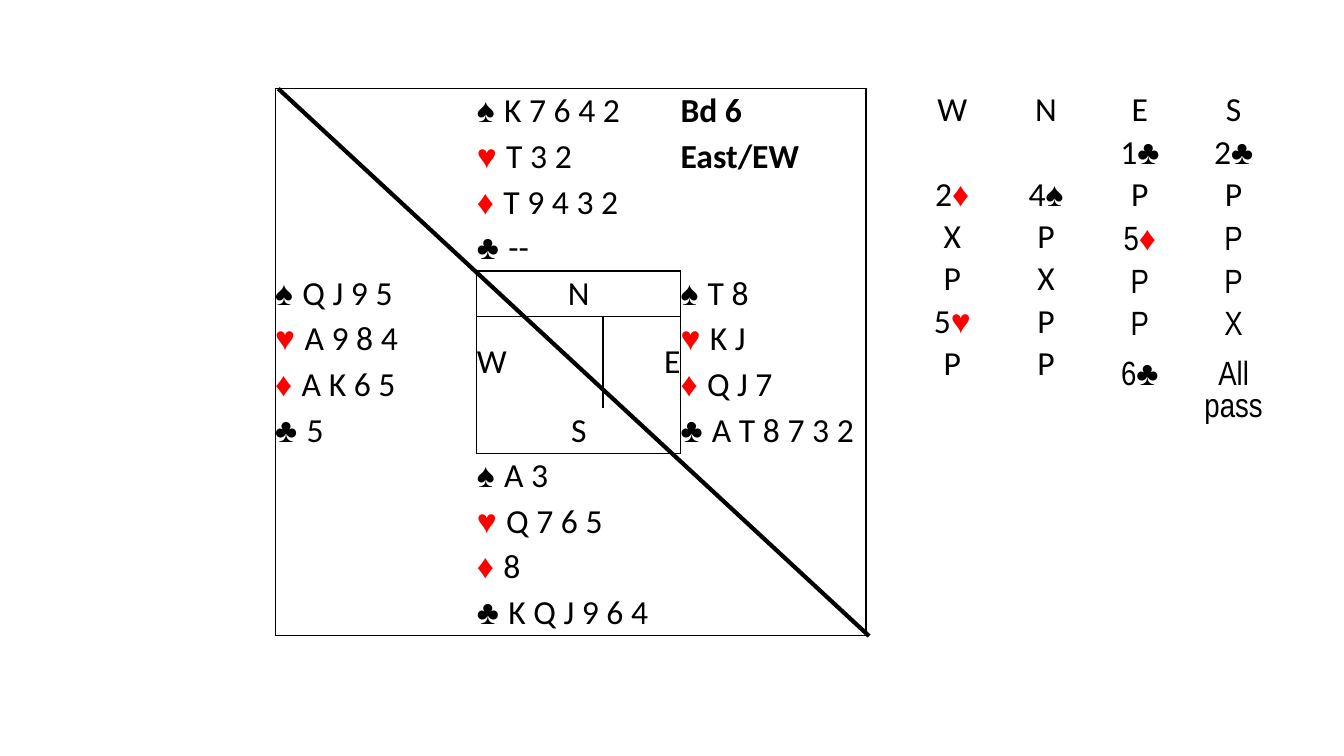
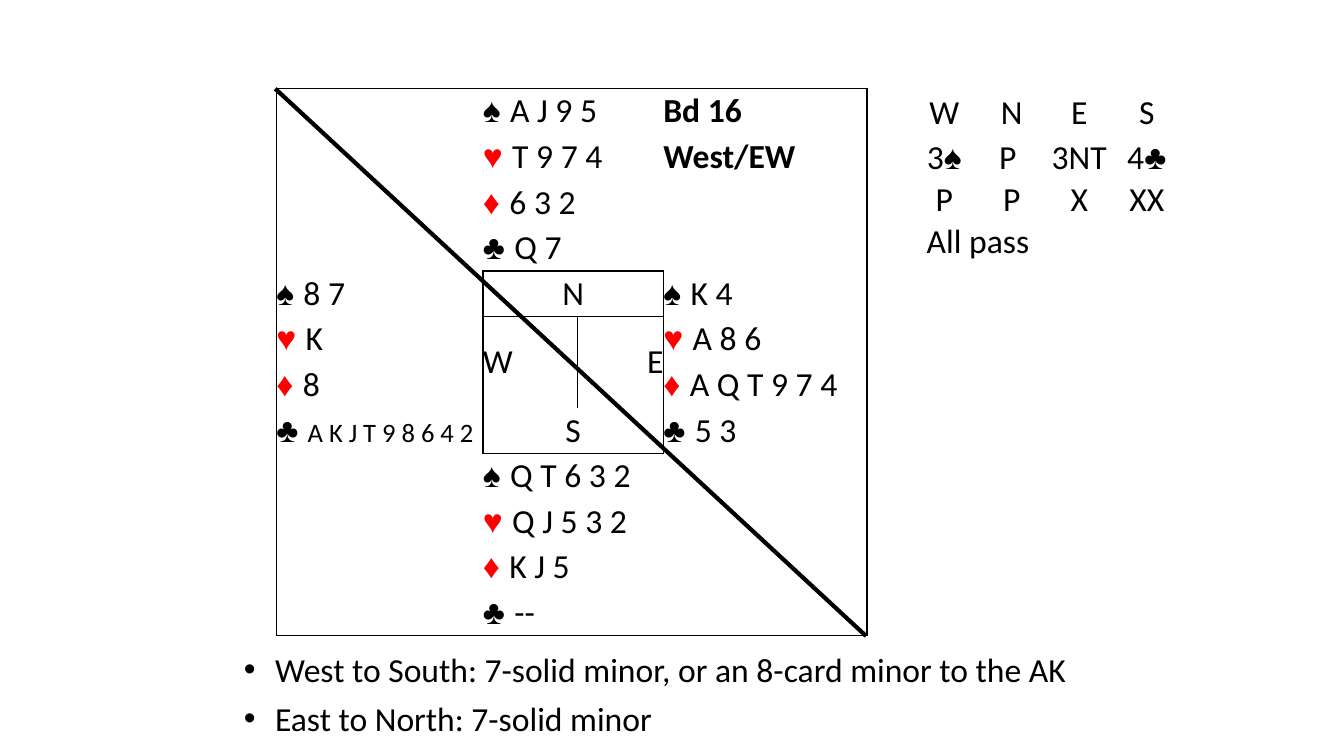
"""Build two bridge deal slides, each with a hand diagram and its auction."""
from pptx import Presentation
from pptx.dml.color import RGBColor
from pptx.enum.shapes import MSO_CONNECTOR
from pptx.enum.text import MSO_ANCHOR, PP_ALIGN
from pptx.oxml import parse_xml
from pptx.oxml.ns import nsdecls
from pptx.util import Inches, Pt

BLACK = RGBColor(0, 0, 0)
RED = RGBColor(255, 0, 0)
LEFT, MID, RIGHT = PP_ALIGN.LEFT, PP_ALIGN.CENTER, PP_ALIGN.RIGHT
TOP, CENTER, BASE = MSO_ANCHOR.TOP, MSO_ANCHOR.MIDDLE, MSO_ANCHOR.BOTTOM
STRAIGHT = MSO_CONNECTOR.STRAIGHT
BODY, NARROW, SYMBOL = "Calibri", "Arial Narrow", "Arial"
SUITS, REDS = "♠♥♦♣", "♥♦"
SIZE, SMALL, FULL = 24, 19, 12
WIDE, HIGH = 13.33, 7.5
DECK_TOP, DEAL_HIGH, DEAL_ROWS = 0.88, 5.43, 12
BID_ROW = 0.42
SEATS = {"N": (0, 1), "W": (4, 0), "E": (4, 3), "S": (8, 1)}
COMPASS = {"N": (4, 1, MID), "W": (5, 1, LEFT),
           "E": (5, 2, RIGHT), "S": (7, 1, MID)}
NO_STYLE = "{2D5ABB26-0587-4C30-8999-92F81FD0307C}"

DEALS = [
    {
        "left": 2.73, "cols": [2, 1.25, 0.77, 1.84], "shift": 0.03,
        "head": ["Bd 6", "East/EW"],
        "hands": {
            "N": ["K 7 6 4 2", "T 3 2", "T 9 4 3 2", "--"],
            "W": ["Q J 9 5", "A 9 8 4", "A K 6 5", "5"],
            "E": ["T 8", "K J", "Q J 7", "A T 8 7 3 2"],
            "S": ["A 3", "Q 7 6 5", "8", "K Q J 9 6 4"],
        },
    },
    {
        "left": 2.74, "cols": [2.05, 0.94, 0.85, 2.02], "shift": -0.01,
        "head": ["Bd 16", "West/EW"],
        "hands": {
            "N": ["A J 9 5", "T 9 7 4", "6 3 2", "Q 7"],
            "W": ["8 7", "K", "8", "A K J T 9 8 6 4 2"],
            "E": ["K 4", "A 8 6", "A Q T 9 7 4", "5 3"],
            "S": ["Q T 6 3 2", "Q J 5 3 2", "K J 5", "--"],
        },
    },
]
CALLS = [
    [
        ["W", "N", "E", "S"],
        ["", "", "1♣", "2♣"],
        ["2♦", "4♠", "P", "P"],
        ["X", "P", "5♦", "P"],
        ["P", "X", "P", "P"],
        ["5♥", "P", "P", "X"],
        ["P", "P", "6♣", "All pass"],
    ],
    [
        ["W", "N", "E", "S"],
        ["3♠", "P ", "3NT", "4♣"],
        ["P", "P", "X", "XX"],
        ["All pass", "", "", ""],
    ],
]
NOTES = ["West to South: 7-solid minor, or an 8-card minor to the AK",
         "East to North: 7-solid minor"]


def put(par, text, size=SIZE, name=BODY, bold=False):
    """Add a run, with suit symbols in their own font and colour."""
    run = par.add_run()
    run.text = text
    suit = text[0] in SUITS
    form = {"size": Pt(size), "name": SYMBOL if suit else name, "bold": bold}
    for key, value in form.items():
        setattr(run.font, key, value)
    run.font.color.rgb = RED if text[0] in REDS else BLACK


def grid(slide, left, cols, rows, pad):
    """Add a plain table with the given column widths and row heights."""
    frame = slide.shapes.add_table(
        len(rows), len(cols), Inches(left), Inches(DECK_TOP),
        Inches(sum(cols)), Inches(sum(rows)))
    table = frame.table
    table._tbl.tblPr[0].text = NO_STYLE
    table.first_row = table.horz_banding = False
    for col, wide in zip(table.columns, cols):
        col.width = Inches(wide)
    for row, high in zip(table.rows, rows):
        row.height = Inches(high)
    form = {"margin_left": pad, "margin_right": pad, "margin_top": pad,
            "margin_bottom": 0, "vertical_anchor": CENTER}
    for cell in table.iter_cells():
        cell.fill.background()
        for key, value in form.items():
            setattr(cell, key, value)
    return table


def box(table, top, left, base, right):
    """Draw a border around a block of cells."""
    for row in range(top, base + 1):
        for col in range(left, right + 1):
            cell = table.cell(row, col)
            if cell.is_spanned:
                continue
            sides = {"L": col == left,
                     "R": col + cell.span_width - 1 == right,
                     "T": row == top,
                     "B": row + cell.span_height - 1 == base}
            edges = [side for side, shown in sides.items() if shown]
            for place, side in enumerate(edges):
                cell._tc.get_or_add_tcPr().insert(place, parse_xml(
                    f'<a:ln{side} {nsdecls("a")} w="{Pt(1)}"><a:solidFill>'
                    f'<a:srgbClr val="{BLACK}"/></a:solidFill></a:ln{side}>'))


def slash(slide, left, wide):
    """Draw the thick diagonal across the hand diagram."""
    line = slide.shapes.add_connector(
        STRAIGHT, Inches(left), Inches(DECK_TOP),
        Inches(left + wide), Inches(DECK_TOP + DEAL_HIGH))
    line.line.color.rgb = BLACK
    line.line.width = Pt(3)
    line._element.spPr.append(parse_xml(f'<a:effectLst {nsdecls("a")}/>'))


def deal(slide, left, cols, shift, head, hands):
    """Lay out four hands around the compass."""
    table = grid(slide, left, cols, [DEAL_HIGH / DEAL_ROWS] * DEAL_ROWS, 0)
    for row in range(DEAL_ROWS):
        if row not in (5, 6):
            table.cell(row, 1).merge(table.cell(row, 2))
    for col in (1, 2):
        table.cell(5, col).merge(table.cell(6, col))
    for seat, (row, col) in SEATS.items():
        for step, (suit, cards) in enumerate(zip(SUITS, hands[seat])):
            par = table.cell(row + step, col).text_frame.paragraphs[0]
            put(par, suit + " ")
            put(par, cards, SMALL if len(cards) > FULL else SIZE)
    for seat, (row, col, align) in COMPASS.items():
        par = table.cell(row, col).text_frame.paragraphs[0]
        par.alignment = align
        put(par, seat)
    for row, text in enumerate(head):
        put(table.cell(row, 3).text_frame.paragraphs[0], text, bold=True)
    box(table, 0, 0, DEAL_ROWS - 1, 3)
    box(table, 4, 1, 7, 2)
    slash(slide, left + shift, sum(cols))


def bids(slide, left, wide, rows, calls):
    """Lay out the auction, one column for each seat."""
    table = grid(slide, left, [wide] * 4, rows, Inches(0.01))
    for row, line in enumerate(calls):
        for col, call in enumerate(line):
            if not call:
                continue
            cell = table.cell(row, col)
            thin = row > 2 and col > 1
            cell.vertical_anchor = BASE if thin else CENTER
            par = cell.text_frame.paragraphs[0]
            par.alignment = MID
            bare = call.rstrip(SUITS)
            for part in filter(None, (bare, call[len(bare):])):
                put(par, part, name=NARROW if thin else BODY)
    return table


def notes(slide, left, top, wide, high, lines):
    """Add a bulleted list."""
    frame = slide.shapes.add_textbox(
        *map(Inches, (left, top, wide, high))).text_frame
    frame.word_wrap = True
    for step, text in enumerate(lines):
        par = frame.add_paragraph() if step else frame.paragraphs[0]
        par.space_after = Pt(6)
        put(par, text)
        prop = par._p.get_or_add_pPr()
        prop.set("marL", str(Inches(0.31)))
        prop.set("indent", str(-Inches(0.31)))
        for tag in (f'buFont {nsdecls("a")} typeface="{SYMBOL}"',
                    f'buChar {nsdecls("a")} char="•"'):
            prop.append(parse_xml(f"<a:{tag}/>"))


def main():
    """Build and save the deck."""
    deck = Presentation()
    deck.slide_width, deck.slide_height = Inches(WIDE), Inches(HIGH)
    first, second = [deck.slides.add_slide(deck.slide_layouts[6])
                     for _ in DEALS]
    for slide, form in zip((first, second), DEALS):
        deal(slide, **form)
    table = bids(first, 8.98, 0.93, [BID_ROW] * 6 + [0.81], CALLS[0])
    for col in (0, 1):
        table.cell(6, col).vertical_anchor = TOP
    table.cell(6, 2).margin_bottom = Inches(0.31)
    table = bids(second, 9.03, 0.67, [0.47] + [BID_ROW] * 3, CALLS[1])
    table.cell(3, 0).merge(table.cell(3, 1))
    notes(second, 2.32, 6.39, 9.25, 0.99, NOTES)
    deck.save("out.pptx")


if __name__ == "__main__":
    main()
